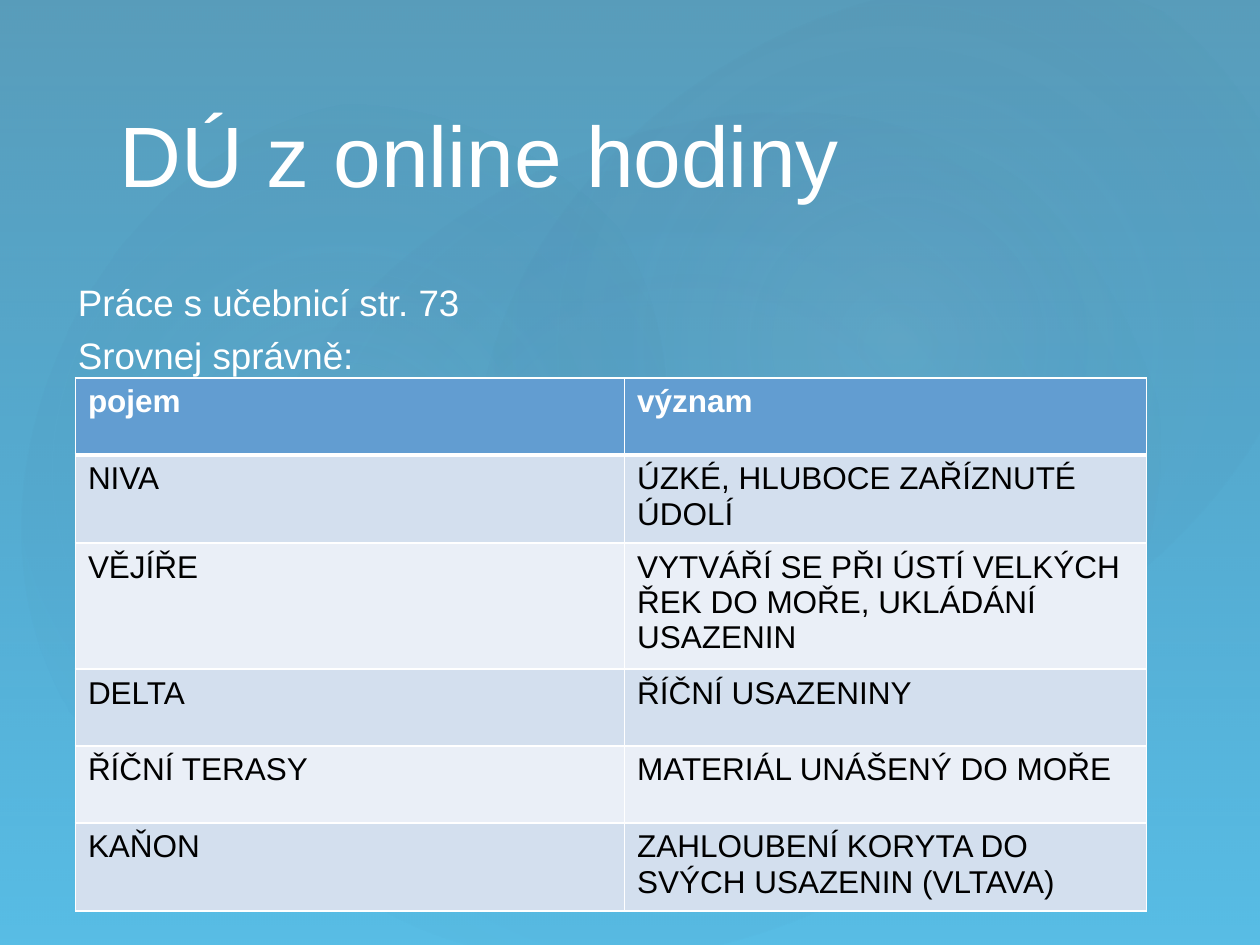
from lxml.etree import SubElement
from pptx import Presentation
from pptx.dml.color import RGBColor
from pptx.enum.shapes import MSO_SHAPE as Shape
from pptx.enum.text import MSO_ANCHOR as Anchor
from pptx.oxml import parse_xml
from pptx.oxml.ns import nsdecls, qn
from pptx.util import Cm, Pt


def color(value):
    return RGBColor.from_string(value)


def add_gradient_shape(preset, box, rotation, stops, direction):
    """Add a borderless shape; each stop is (position %, colour, opacity %)."""
    shape = slide.shapes.add_shape(preset, *[Cm(length) for length in box])
    shape.rotation = rotation
    shape.shadow.inherit = False
    shape.line.fill.background()
    stop_xml = "".join(
        f'<a:gs pos="{position * 1000}"><a:srgbClr val="{value}">'
        f'<a:alpha val="{opacity * 1000}"/></a:srgbClr></a:gs>'
        for position, value, opacity in stops)
    gradient = parse_xml(f'<a:gradFill {nsdecls("a")} rotWithShape="1">'
                         f'<a:gsLst>{stop_xml}</a:gsLst>{direction}</a:gradFill>')
    shape._element.spPr.find(qn("a:prstGeom")).addnext(gradient)


presentation = Presentation()
presentation.slide_width = Cm(25.4)
presentation.slide_height = Cm(19.05)
slide = presentation.slides.add_slide(presentation.slide_layouts[6])

# Background: flat blue, a darkening veil and three faint glows
slide.background.fill.solid()
slide.background.fill.fore_color.rgb = color("5ECDF5")
add_gradient_shape(Shape.RECTANGLE, (0, 0, 25.4, 19.05), 0,
                   [(0, "504652", 36), (100, "242852", 10)],
                   '<a:lin ang="5400000" scaled="0"/>')
glows = [
    ((3.81, 2.9, 20.12, 15.85), 328.7, 7),
    ((-0.76, 3.25, 15.39, 12.45), 294.3, 8),
    ((9.09, 0.33, 18.01, 13.21), 328.7, 8),
]
for box, rotation, opacity in glows:
    add_gradient_shape(Shape.OVAL, box, rotation,
                       [(0, "C4BCC6", opacity), (58, "242852", 0)],
                       '<a:path path="circle"><a:fillToRect l="50000" t="50000" '
                       'r="50000" b="50000"/></a:path>')

# Title and instructions
texts = [
    ((2.16, 0.64, 20.96, 3.61), Anchor.BOTTOM, 49, 0, ["DÚ z online hodiny"]),
    ((1.32, 5.51, 21.59, 12.27), Anchor.TOP, 21, 5.5,
     ["Práce s učebnicí str. 73", "Srovnej správně:"]),
]
for box, anchor, size, gap, lines in texts:
    frame = slide.shapes.add_textbox(*[Cm(length) for length in box]).text_frame
    frame.word_wrap = True
    frame.vertical_anchor = anchor
    frame.text = "\n".join(lines)
    for paragraph in frame.paragraphs:
        paragraph.space_after = Pt(gap)
        paragraph.font.name = "Arial"
        paragraph.font.size = Pt(size)
        paragraph.font.color.rgb = color("FFFFFF")

# Table of terms and meanings
rows = [
    ("pojem", "význam"),
    ("NIVA", "ÚZKÉ, HLUBOCE ZAŘÍZNUTÉ ÚDOLÍ"),
    ("VĚJÍŘE", "VYTVÁŘÍ SE PŘI ÚSTÍ VELKÝCH ŘEK DO MOŘE, UKLÁDÁNÍ USAZENIN"),
    ("DELTA", "ŘÍČNÍ USAZENINY"),
    ("ŘÍČNÍ TERASY", "MATERIÁL UNÁŠENÝ DO MOŘE"),
    ("KAŇON", "ZAHLOUBENÍ KORYTA DO SVÝCH USAZENIN (VLTAVA)"),
]
row_height = Cm(1.55)
table = slide.shapes.add_table(len(rows), 2, Cm(1.52), Cm(7.62), Cm(21.59),
                               row_height * len(rows)).table
table.columns[0].width = Cm(11.07)
table.columns[1].width = Cm(10.52)
for row_index, row in enumerate(rows):
    is_header = row_index == 0
    table.rows[row_index].height = row_height
    for column_index, text in enumerate(row):
        cell = table.cell(row_index, column_index)
        cell.text = text
        font = cell.text_frame.paragraphs[0].font
        font.name = "Arial"
        font.size = Pt(18)
        font.bold = is_header
        font.color.rgb = color("FFFFFF" if is_header else "000000")

        # White borders, thicker under the header
        properties = cell._tc.get_or_add_tcPr()
        for side in ("L", "R", "T", "B"):
            thick = (row_index, side) in ((0, "B"), (1, "T"))
            line = SubElement(properties, qn(f"a:ln{side}"), w=str(Pt(3 if thick else 1)))
            fill = SubElement(line, qn("a:solidFill"))
            SubElement(fill, qn("a:srgbClr"), val="FFFFFF")

        cell.fill.solid()
        band = "D3DFEE" if row_index % 2 else "EAEFF7"
        cell.fill.fore_color.rgb = color("629DD1" if is_header else band)

presentation.save("out.pptx")
